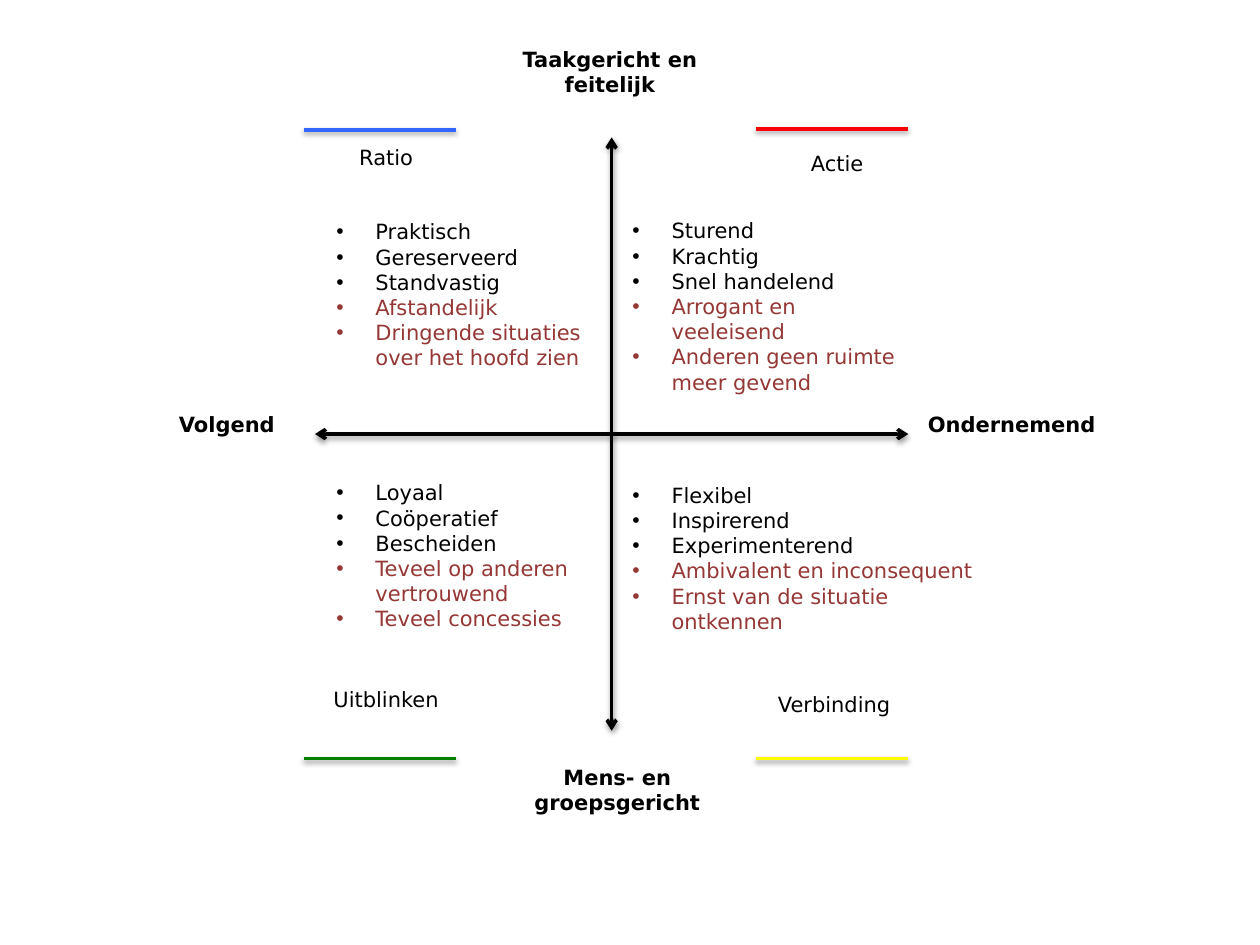
from lxml.etree import SubElement
from pptx import Presentation
from pptx.dml.color import RGBColor
from pptx.enum.shapes import MSO_CONNECTOR
from pptx.enum.text import MSO_AUTO_SIZE as AutoSize, PP_ALIGN as Align
from pptx.oxml.ns import qn
from pptx.util import Cm, Pt

COLORS = {
    "text": "000000", "pitfall": "953735",
    "ratio": "3366FF", "actie": "FF0000",
    "uitblinken": "008000", "verbinding": "FFFF00",
}
FONT = "DejaVu Sans"
BAR_WIDTH = 3.07
LABEL_WIDTH = 5.49
LINE_HEIGHT = 0.76
STRENGTHS = 3  # the traits after these are pitfalls


def add_line(slide, start, end, color, arrows=False):
    line = slide.shapes.add_connector(
        MSO_CONNECTOR.STRAIGHT, *(Cm(v) for v in (*start, *end)))
    line.line.color.rgb = RGBColor.from_string(COLORS[color])
    line.line.width = Pt(2)
    properties = line._element.spPr
    if arrows:
        outline = properties.find(qn("a:ln"))
        for tag in ("a:headEnd", "a:tailEnd"):
            SubElement(outline, qn(tag), type="arrow")
    # Soft shadow straight below
    effects = SubElement(properties, qn("a:effectLst"))
    shadow = SubElement(effects, qn("a:outerShdw"), blurRad=str(Pt(3.1)),
                        dist=str(Pt(1.6)), dir="5400000", rotWithShape="0")
    shade = SubElement(shadow, qn("a:srgbClr"), val=COLORS["text"])
    SubElement(shade, qn("a:alpha"), val="38000")


def add_text(slide, box, text):
    frame = slide.shapes.add_textbox(*(Cm(v) for v in box)).text_frame
    frame.word_wrap = True
    frame.auto_size = AutoSize.SHAPE_TO_FIT_TEXT
    frame.text = text
    for paragraph in frame.paragraphs:
        font = paragraph.runs[0].font
        font.name, font.size = FONT, Pt(12)
        font.color.rgb = RGBColor.from_string(COLORS["text"])
    return frame.paragraphs


def add_label(slide, box, text, bold=False):
    label = add_text(slide, box, text)[0]
    label.alignment = Align.CENTER
    label.runs[0].font.bold = bold


def add_traits(slide, box, traits):
    for number, trait in enumerate(add_text(slide, box, "\n".join(traits))):
        if number >= STRENGTHS:
            trait.runs[0].font.color.rgb = RGBColor.from_string(COLORS["pitfall"])
        indent = Cm(0.79)
        layout = trait._p.get_or_add_pPr()
        layout.set("marL", str(indent))
        layout.set("indent", str(-indent))
        SubElement(layout, qn("a:buFont"), typeface="Arial")
        SubElement(layout, qn("a:buChar"), char="•")


def add_axes(slide, left, top, size):
    middle_x, middle_y = left + size / 2, top + size / 2
    add_line(slide, (middle_x, top), (middle_x, top + size), "text", True)
    add_line(slide, (left, middle_y), (left + size, middle_y), "text", True)
    # Names of the four poles, relative to the axes
    for x, y, lines, name in [
        (3.2, -1.96, 2, "Taakgericht en feitelijk"),
        (3.35, 12.52, 2, "Mens- en groepsgericht"),
        (11.3, 5.41, 1, "Ondernemend"),
        (-4.52, 5.41, 1, "Volgend"),
    ]:
        box = (left + x, top + y, LABEL_WIDTH, 0.25 + 0.51 * lines)
        add_label(slide, box, name, bold=True)


def add_quadrant(slide, left, top, name, bar, label, listing, traits):
    """Bar, name and traits are placed relative to the quadrant's corner."""
    def place(x, y, *size):
        return (left + x, top + y, *size)

    x, y = place(*bar)
    add_label(slide, place(*label, LINE_HEIGHT), name)
    add_line(slide, (x, y), (x + BAR_WIDTH, y), name.lower())
    add_traits(slide, place(*listing), traits)


# Corner, name, bar (x, y), label (x, y, width), list (x, y, width, height)
LEFT, RIGHT, UPPER, LOWER = 6.12, 12.32, 2.6, 8.74
QUADRANTS = [
    (LEFT, UPPER, "Ratio", (0, 0.02), (-0.81, 0.19, 4.95), (0.41, 1.69, 5.82, 3.33),
     ["Praktisch", "Gereserveerd", "Standvastig", "Afstandelijk",
      "Dringende situaties over het hoofd zien"]),
    (RIGHT, UPPER, "Actie", (2.92, 0), (2.41, 0.32, 4.29), (0.18, 1.67, 6.07, 3.84),
     ["Sturend", "Krachtig", "Snel handelend", "Arrogant en veeleisend",
      "Anderen geen ruimte meer gevend"]),
    (LEFT, LOWER, "Uitblinken", (0, 6.55), (-0.53, 4.98, 4.39), (0.41, 0.81, 5.82, 3.33),
     ["Loyaal", "Coöperatief", "Bescheiden", "Teveel op anderen vertrouwend",
      "Teveel concessies"]),
    (RIGHT, LOWER, "Verbinding", (2.92, 6.55), (1.93, 5.08, 5.13), (0.18, 0.86, 7.37, 3.33),
     ["Flexibel", "Inspirerend", "Experimenterend", "Ambivalent en inconsequent",
      "Ernst van de situatie ontkennen"]),
]


def main():
    deck = Presentation()
    deck.slide_width, deck.slide_height = Cm(25.4), Cm(19.05)
    slide = deck.slides.add_slide(deck.slide_layouts.get_by_name("Blank"))
    add_axes(slide, left=6.35, top=2.77, size=11.96)
    for quadrant in QUADRANTS:
        add_quadrant(slide, *quadrant)
    deck.save("out.pptx")


if __name__ == "__main__":
    main()
